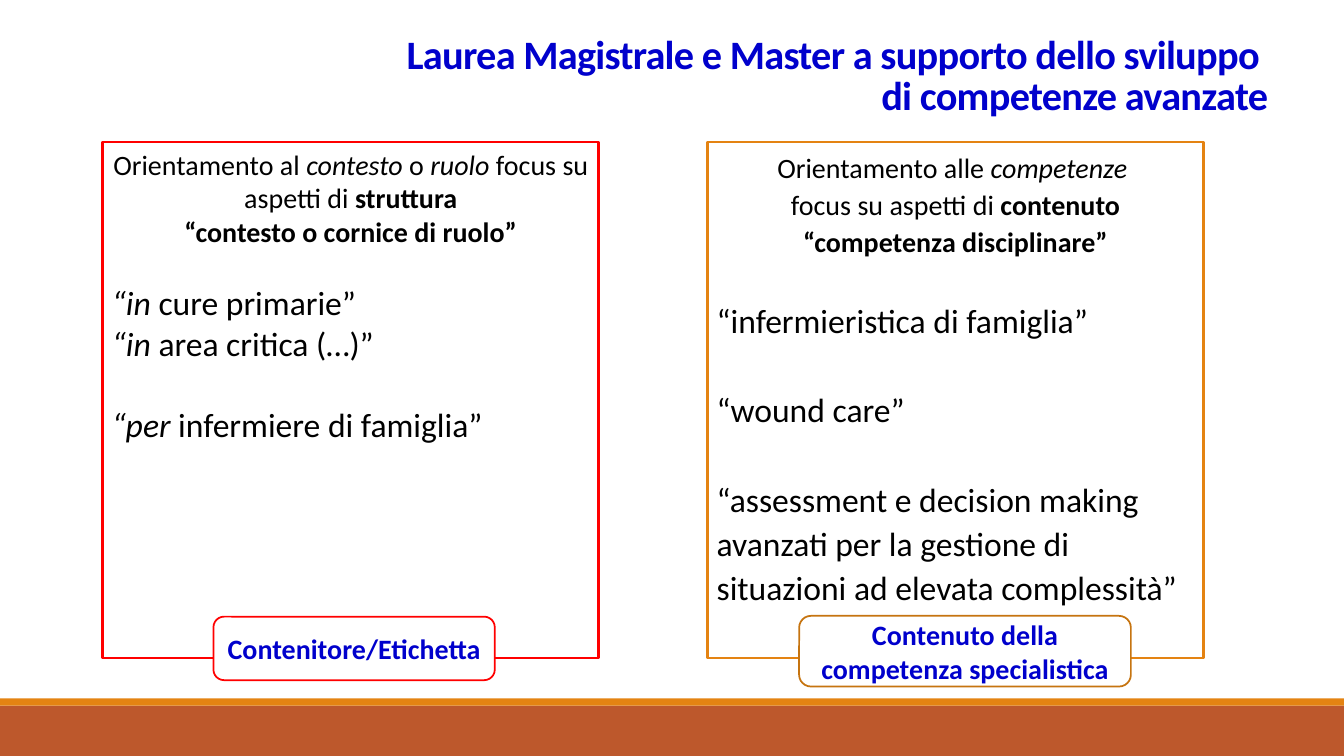
from pptx import Presentation
from pptx.dml.color import RGBColor
from pptx.enum.shapes import MSO_SHAPE
from pptx.enum.text import MSO_ANCHOR, MSO_AUTO_SIZE, PP_ALIGN
from pptx.oxml.ns import qn
from pptx.util import Cm, Pt
from lxml.etree import SubElement

WHITE = RGBColor(0xFF, 0xFF, 0xFF)
BLACK = RGBColor(0x00, 0x00, 0x00)
BLUE = RGBColor(0x00, 0x00, 0xCC)
RED = RGBColor(0xFF, 0x00, 0x00)
ORANGE = RGBColor(0xE4, 0x83, 0x12)
DARK_ORANGE = RGBColor(0xC6, 0x74, 0x10)
RUST = RGBColor(0xBD, 0x58, 0x2C)

FONT = "Calibri"
HEADING_SIZE, EXAMPLE_SIZE = 20, 24
LINE_HEIGHT = 1.22  # Calibri line height relative to its size

# Each paragraph is a list of (text, style) runs; "i" is italic, "b" is bold.
CONTEXT_HEADING = [
    [("Orientamento al ", ""), ("contesto", "i"), (" o ", ""), ("ruolo ", "i"),
     ("focus su aspetti di ", ""), ("struttura", "b")],
    [("“contesto o cornice di ruolo”", "b")],
]
# Examples come in groups separated by one line of space.
CONTEXT_EXAMPLES = [
    [[("“in ", "i"), ("cure primarie”", "")],
     [("“in", "i"), (" area critica (…)”", "")]],
    [[("“per ", "i"), ("infermiere di famiglia”", "")]],
]
SKILL_HEADING = [
    [("Orientamento alle ", ""), ("competenze ", "i")],
    [("focus su aspetti di ", ""), ("contenuto", "b")],
    [("“competenza disciplinare”", "b")],
]
SKILL_EXAMPLES = [
    [[("“infermieristica di famiglia”", "")]],
    [[("“wound care”", "")]],
    [[("“assessment e decision making avanzati per la gestione di "
       "situazioni ad elevata complessità”", "")]],
]


def place(shape, left, top, width, height):
    shape.left, shape.top = Cm(left), Cm(top)
    shape.width, shape.height = Cm(width), Cm(height)


def add_run(paragraph, text, size, color, style=""):
    run = paragraph.add_run()
    run.text = text
    font = run.font
    font.name, font.size = FONT, Pt(size)
    font.bold, font.italic = "b" in style, "i" in style
    font.color.rgb = color
    return run


def paint(shape, fill, line=None, line_width=0):
    shape.fill.solid()
    shape.fill.fore_color.rgb = fill
    if line is None:
        shape.line.fill.background()
    else:
        shape.line.color.rgb = line
        shape.line.width = Pt(line_width)


def add_box(slide, preset, bounds, fill, line=None, line_width=0):
    box = slide.shapes.add_shape(preset, *map(Cm, bounds))
    box.shadow.inherit = False
    paint(box, fill, line, line_width)
    return box


def fill_title(title):
    place(title, 1.73, 0.74, 30.48, 2.39)
    frame = title.text_frame
    frame.auto_size = MSO_AUTO_SIZE.NONE
    frame.vertical_anchor = MSO_ANCHOR.BOTTOM
    paragraph = frame.paragraphs[0]
    paragraph.alignment = PP_ALIGN.RIGHT
    paragraph.line_spacing = 0.85
    first = add_run(paragraph, "Laurea Magistrale e Master a supporto dello sviluppo ",
                    28.8, BLUE, "b")
    paragraph.add_line_break()
    second = add_run(paragraph, "di competenze avanzate", 28.8, BLUE, "b")
    for run in (first, second):
        run.font._element.set("spc", "-50")


def fill_panel(panel, left, border, heading, examples, spacing):
    place(panel, left, 3.58, 12.5, 13)
    paint(panel, WHITE, border, 2)
    frame = panel.text_frame
    frame.auto_size = MSO_AUTO_SIZE.NONE
    frame.vertical_anchor = MSO_ANCHOR.TOP
    frame.margin_left = frame.margin_right = 0
    frame.margin_top = frame.margin_bottom = Cm(0.13)

    def write(runs, size, alignment, indent, gap):
        """Add an unbulleted paragraph, gap points below the one before."""
        first = frame.paragraphs[0]
        paragraph = frame.add_paragraph() if first.runs else first
        paragraph.alignment = alignment
        paragraph.line_spacing = spacing
        paragraph.space_before, paragraph.space_after = Pt(gap), Pt(0)
        properties = paragraph._p.get_or_add_pPr()
        properties.set("marL", str(Cm(indent)))
        properties.set("indent", "0")
        SubElement(properties, qn("a:buNone"))
        for text, style in runs:
            add_run(paragraph, text, size, BLACK, style)

    for runs in heading:
        write(runs, HEADING_SIZE, PP_ALIGN.CENTER, 0, 0)
    gap_size = HEADING_SIZE
    for group in examples:
        for position, runs in enumerate(group):
            gap = 0 if position else round(gap_size * LINE_HEIGHT * spacing, 1)
            write(runs, EXAMPLE_SIZE, PP_ALIGN.LEFT, 0.23, gap)
        gap_size = EXAMPLE_SIZE


def add_tag(slide, bounds, border, text):
    tag = add_box(slide, MSO_SHAPE.ROUNDED_RECTANGLE, bounds, WHITE, border, 1.25)
    frame = tag.text_frame
    frame.word_wrap = True
    frame.vertical_anchor = MSO_ANCHOR.MIDDLE
    paragraph = frame.paragraphs[0]
    paragraph.alignment = PP_ALIGN.CENTER
    add_run(paragraph, text, HEADING_SIZE, BLUE, "b")


def main():
    deck = Presentation()
    deck.slide_width, deck.slide_height = Cm(33.87), Cm(19.05)
    two_content = deck.slide_layouts[3]
    slide = deck.slides.add_slide(two_content)

    add_box(slide, MSO_SHAPE.RECTANGLE, (0, 17.78, 33.87, 1.27), RUST)
    add_box(slide, MSO_SHAPE.RECTANGLE, (0, 17.6, 33.87, 0.18), ORANGE)

    fill_title(slide.shapes.title)
    fill_panel(slide.placeholders[1], 2.59, RED, CONTEXT_HEADING, CONTEXT_EXAMPLES, 1.0)
    fill_panel(slide.placeholders[2], 17.83, ORANGE, SKILL_HEADING, SKILL_EXAMPLES, 1.1)

    add_tag(slide, (5.38, 15.54, 7.09, 1.6), RED, "Contenitore/Etichetta")
    add_tag(slide, (20.14, 15.52, 8.36, 1.78), DARK_ORANGE,
            "Contenuto della competenza specialistica")
    deck.save("out.pptx")


if __name__ == "__main__":
    main()
